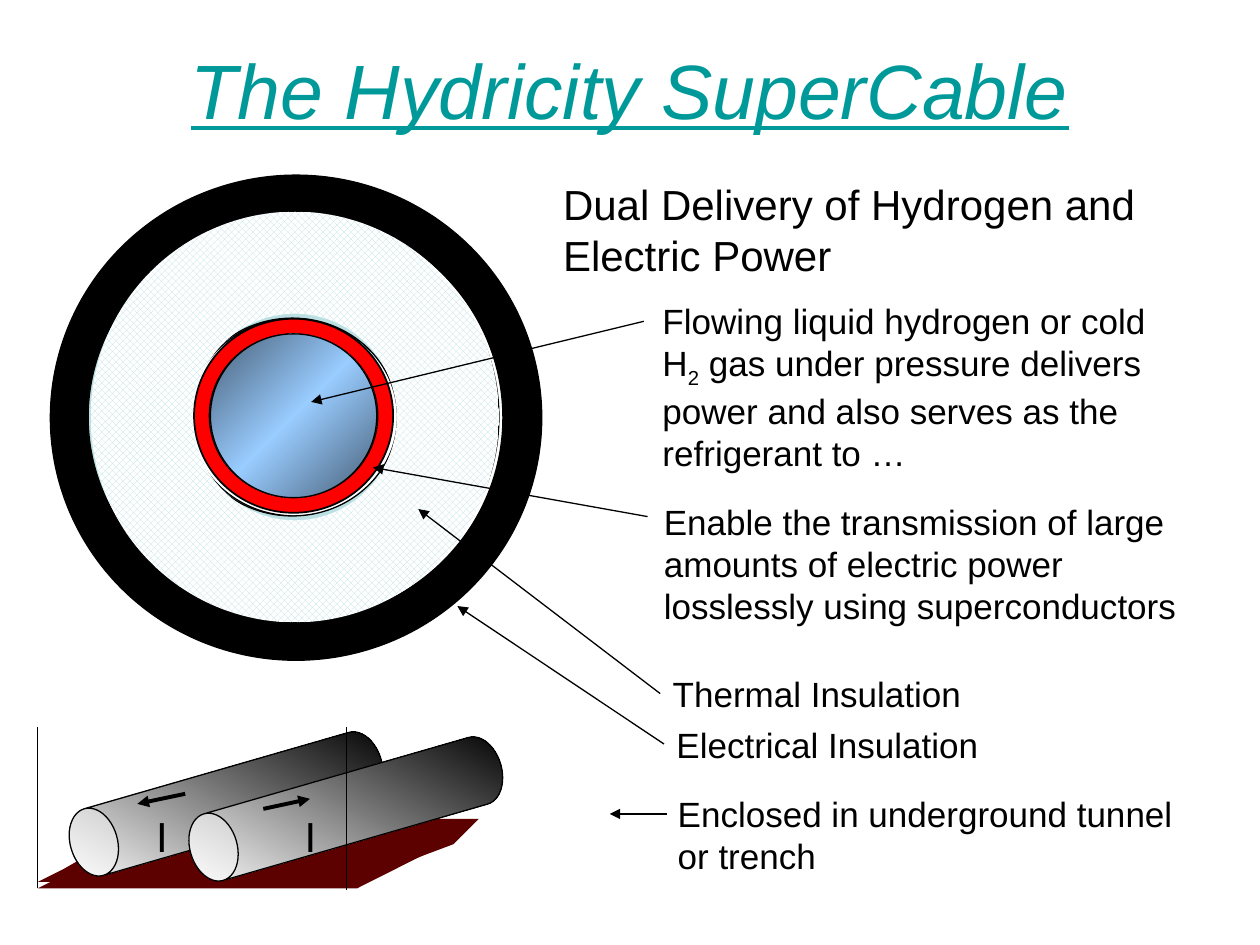
from dataclasses import dataclass
from copy import deepcopy

from lxml import etree
from pptx import Presentation
from pptx.dml.color import RGBColor
from pptx.enum.dml import MSO_PATTERN
from pptx.enum.shapes import MSO_CONNECTOR, MSO_SHAPE
from pptx.enum.text import MSO_ANCHOR, MSO_AUTO_SIZE, PP_ALIGN
from pptx.oxml.ns import qn
from pptx.util import Inches, Pt

STRAIGHT = MSO_CONNECTOR.STRAIGHT
DONUT, OVAL, CAN = MSO_SHAPE.DONUT, MSO_SHAPE.OVAL, MSO_SHAPE.CAN
PARALLELOGRAM = MSO_SHAPE.PARALLELOGRAM
CHECKER = MSO_PATTERN.LARGE_CHECKER_BOARD
MIDDLE, CENTER = MSO_ANCHOR.MIDDLE, PP_ALIGN.CENTER
FIT_SHAPE = MSO_AUTO_SIZE.SHAPE_TO_FIT_TEXT
LEFT_SIDE = 1

BLACK = RGBColor(0x00, 0x00, 0x00)
WHITE = RGBColor(0xFF, 0xFF, 0xFF)
RED = RGBColor(0xFF, 0x00, 0x00)
TEAL = RGBColor(0x00, 0x99, 0x99)
PALE = RGBColor(0xBB, 0xE0, 0xE3)
STEEL = RGBColor(0x47, 0x5E, 0x76)
SKY = RGBColor(0x99, 0xCC, 0xFF)
MAROON = RGBColor(0x5C, 0x00, 0x00)

FONT = "Arial"
COLUMNS, ROWS = 100, 75
CELL = Inches(10) // COLUMNS


@dataclass
class Area:
    column: float
    row: float
    columns: float
    rows: float

    def lengths(self) -> list[int]:
        return [round(n * CELL) for n in (self.column, self.row, self.columns, self.rows)]


@dataclass
class Ring:
    area: Area
    thickness: float
    color: RGBColor
    outline: float = 0
    checked: bool = False


@dataclass
class Callout:
    area: Area
    spans: tuple[str, ...]
    start: tuple[float, float]
    target: tuple[float, float]
    joined: bool = False


RINGS = [
    Ring(Area(4, 13.9, 39, 38.5), 0.08, BLACK, 0.75),
    Ring(Area(7.2, 17.4, 32.4, 31.4), 0.25, PALE, 0.75),
    Ring(Area(7, 17.4, 32.4, 31.4), 0.25, PALE, 0.75),
    Ring(Area(7.2, 16.8, 32.4, 32.6), 0.25, PALE, checked=True),
    Ring(Area(15.4, 25.3, 15.8, 15.4), 0.08, RED, 1),
]

CALLOUTS = [
    Callout(Area(51.6, 23.3, 41.7, 14.3),
            ("Flowing liquid hydrogen or cold H", "2",
             " gas under pressure delivers power and also serves as the refrigerant to …"),
            (51.1, 25.5), (24.7, 31.9)),
    Callout(Area(51.7, 39.2, 42.8, 11),
            ("Enable the transmission of large amounts of electric power "
             "losslessly using superconductors",),
            (51.4, 41), (29.6, 37.1)),
    Callout(Area(52.4, 52.9, 42.8, 4.3), ("Thermal Insulation",),
            (52.2, 55.1), (33.2, 40.4), True),
    Callout(Area(52.7, 56.9, 42.8, 4.3), ("Electrical Insulation",),
            (52.3, 58.8), (36.3, 48.1), True),
    Callout(Area(52.8, 62.4, 42.8, 7.7), ("Enclosed in underground tunnel or trench",),
            (52.9, 64.6), (48.4, 64.6)),
]


def outline(shape, width: float) -> None:
    shape.shadow.inherit = False
    if width:
        shape.line.color.rgb = BLACK
        shape.line.width = Pt(width)
    else:
        shape.line.fill.background()


def add_shape(page, kind, area: Area, width: float = 0, adjustment: float | None = None):
    shape = page.shapes.add_shape(kind, *area.lengths())
    if adjustment is not None:
        shape.adjustments[0] = adjustment
    outline(shape, width)
    return shape


def fill_solid(shape, color: RGBColor) -> None:
    shape.fill.solid()
    shape.fill.fore_color.rgb = color


def fill_gradient(shape, colors: list[RGBColor]) -> None:
    shape.fill.gradient()
    shape.fill.gradient_angle = 315
    stop_list = shape._element.spPr.find(".//" + qn("a:gsLst"))
    while len(stop_list) < len(colors):
        stop_list.append(deepcopy(stop_list[0]))
    for index, (stop, color) in enumerate(zip(shape.fill.gradient_stops, colors)):
        stop.position = index / (len(colors) - 1)
        stop.color.rgb = color


def add_ring(page, ring: Ring) -> None:
    shape = add_shape(page, DONUT, ring.area, ring.outline, ring.thickness)
    if ring.checked:
        shape.fill.patterned()
        shape.fill.pattern = CHECKER
        shape.fill.fore_color.rgb = ring.color
        shape.fill.back_color.rgb = WHITE
    else:
        fill_solid(shape, ring.color)


def add_line(page, start: tuple[float, float], end: tuple[float, float],
             width: float = 0.75, arrow: bool = True):
    points = [round(n * CELL) for n in (*start, *end)]
    line = page.shapes.add_connector(STRAIGHT, *points)
    line.line.color.rgb = BLACK
    line.line.width = Pt(width)
    properties = line._element.spPr
    if arrow:
        etree.SubElement(properties.find(qn("a:ln")), qn("a:tailEnd"), type="triangle")
    etree.SubElement(properties, qn("a:effectLst"))
    return line


def add_text(page, area: Area, spans: tuple[str, ...], size: float, wrap: bool = True):
    box = page.shapes.add_textbox(*area.lengths())
    box.text_frame.word_wrap = wrap
    box.text_frame.auto_size = FIT_SHAPE
    para = box.text_frame.paragraphs[0]
    para.font.name = FONT
    para.font.size = Pt(size)
    para.font.color.rgb = BLACK
    for index, words in enumerate(spans):
        span = para.add_run()
        span.text = words
        if index == 1:
            span._r.get_or_add_rPr().set("baseline", "-25000")
    return box


def add_callout(page, callout: Callout) -> None:
    box = add_text(page, callout.area, callout.spans, 20)
    line = add_line(page, callout.start, callout.target)
    if callout.joined:
        line.begin_connect(box, LEFT_SIDE)


def add_title(page) -> None:
    title = page.shapes.title
    title.left, title.top, title.width, title.height = Area(5, 0.8, 90, 12.5).lengths()
    title.text_frame.text = "The Hydricity SuperCable"
    title.text_frame.vertical_anchor = MIDDLE
    para = title.text_frame.paragraphs[0]
    para.alignment = CENTER
    font = para.font
    font.name, font.size, font.italic, font.underline = FONT, Pt(44), True, True
    font.color.rgb = TEAL


def add_pipe(page, area: Area, start: tuple[float, float], end: tuple[float, float],
             label: Area) -> None:
    pipe = add_shape(page, CAN, area, 0.75, 0.682)
    pipe.rotation = 253.9
    fill_gradient(pipe, [WHITE, BLACK])
    add_line(page, start, end, 2.25)
    add_text(page, label, ("I",), 24, wrap=False)


def add_trench(page) -> None:
    add_line(page, (3, 57.7), (3, 70.5), arrow=False)
    edge = [(3, 70.5), (4.7, 68.8), (12.4, 64.9), (37.7, 64.9), (36.1, 66.6), (28.3, 70.5)]
    builder = page.shapes.build_freeform(*edge[0], scale=CELL)
    builder.add_line_segments(edge[1:])
    depth = builder.convert_to_shape()
    outline(depth, 0)
    fill_solid(depth, MAROON)
    floor = add_shape(page, PARALLELOGRAM, Area(3, 66.6, 33.1, 3.9), adjustment=1.986)
    fill_solid(floor, MAROON)
    add_pipe(page, Area(15.2, 51, 5.5, 25.6), (14.7, 63), (10.9, 63.8),
             Area(11.4, 63.8, 3.8, 5))
    add_pipe(page, Area(24.7, 51.4, 5.5, 25.6), (20.9, 64.2), (24.6, 63.4),
             Area(23.2, 63.8, 3.8, 5))
    add_line(page, (27.5, 57.7), (27.5, 70.6), arrow=False)


def main() -> None:
    deck = Presentation()
    deck.slide_width, deck.slide_height = COLUMNS * CELL, ROWS * CELL
    page = deck.slides.add_slide(deck.slide_layouts.get_by_name("Title Only"))
    add_title(page)
    for ring in RINGS:
        add_ring(page, ring)
    core = add_shape(page, OVAL, Area(16.7, 26.5, 13.2, 13), 0.75)
    fill_gradient(core, [STEEL, SKY, STEEL])
    add_text(page, Area(43.7, 13.7, 51.9, 9),
             ("Dual Delivery of Hydrogen and Electric Power",), 24)
    add_trench(page)
    for callout in CALLOUTS:
        add_callout(page, callout)
    deck.save("out.pptx")


if __name__ == "__main__":
    main()
